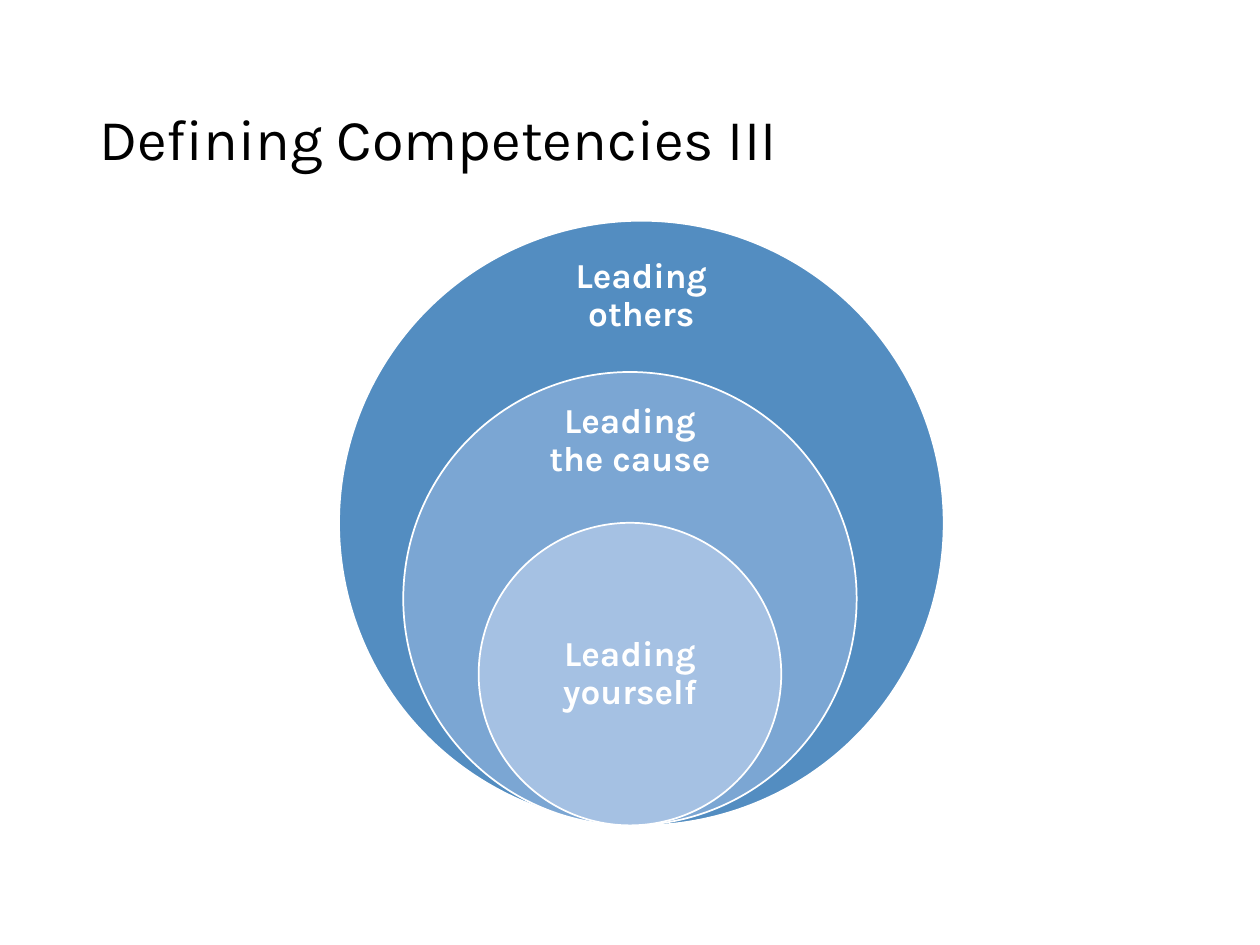
from pptx import Presentation
from pptx import util as u
from pptx.dml.color import RGBColor
from pptx.enum import shapes, text


def color(hex_value):
    return RGBColor.from_string(hex_value)


def write(box, words, size, ink, bold=False, align=text.PP_ALIGN.LEFT, inset=0.25):
    frame = box.text_frame
    frame.word_wrap = True
    frame.auto_size = text.MSO_AUTO_SIZE.NONE
    frame.vertical_anchor = text.MSO_ANCHOR.MIDDLE
    frame.margin_left = frame.margin_right = u.Cm(inset)
    frame.margin_top = frame.margin_bottom = u.Cm(inset)
    para = frame.paragraphs[0]
    para.alignment = align
    para.line_spacing = 0.9
    span = para.add_run()
    span.text = words
    span.font.name = "Karla"
    span.font.size = u.Pt(size)
    span.font.bold = bold
    span.font.color.rgb = color(ink)


deck = Presentation()
deck.slide_width, deck.slide_height = u.Cm(25.4), u.Cm(19.05)
page = deck.slides.add_slide(deck.slide_layouts[5])

title = page.shapes.title
title.left, title.top = u.Cm(1.75), u.Cm(1.02)
title.width, title.height = u.Cm(21.9), u.Cm(3.68)
write(title, "Defining Competencies III", 33, "000000")

# Nested circles rest on one baseline.
baseline = 16.64
label_width = 4.3
# words, fill, circle centre, diameter, label top, label height
rings = [
    ("Leading others", "538DC1", 12.93, 12.19, 5.05, 1.83),
    ("Leading the cause", "7BA6D3", 12.7, 9.14, 8.05, 1.7),
    ("Leading yourself", "A5C1E3", 12.7, 6.1, 12.07, 3.05),
]
for words, fill, center, diameter, label_top, label_height in rings:
    circle = page.shapes.add_shape(
        shapes.MSO_SHAPE.OVAL,
        u.Cm(center - diameter / 2), u.Cm(baseline - diameter),
        u.Cm(diameter), u.Cm(diameter))
    circle.shadow.inherit = False
    circle.fill.solid()
    circle.fill.fore_color.rgb = color(fill)
    circle.line.color.rgb = color("FFFFFF")
    circle.line.width = u.Pt(1)

    label = page.shapes.add_textbox(
        u.Cm(center - label_width / 2), u.Cm(label_top),
        u.Cm(label_width), u.Cm(label_height))
    write(label, words, 20, "FFFFFF", bold=True,
          align=text.PP_ALIGN.CENTER, inset=0.4)

deck.save("out.pptx")
